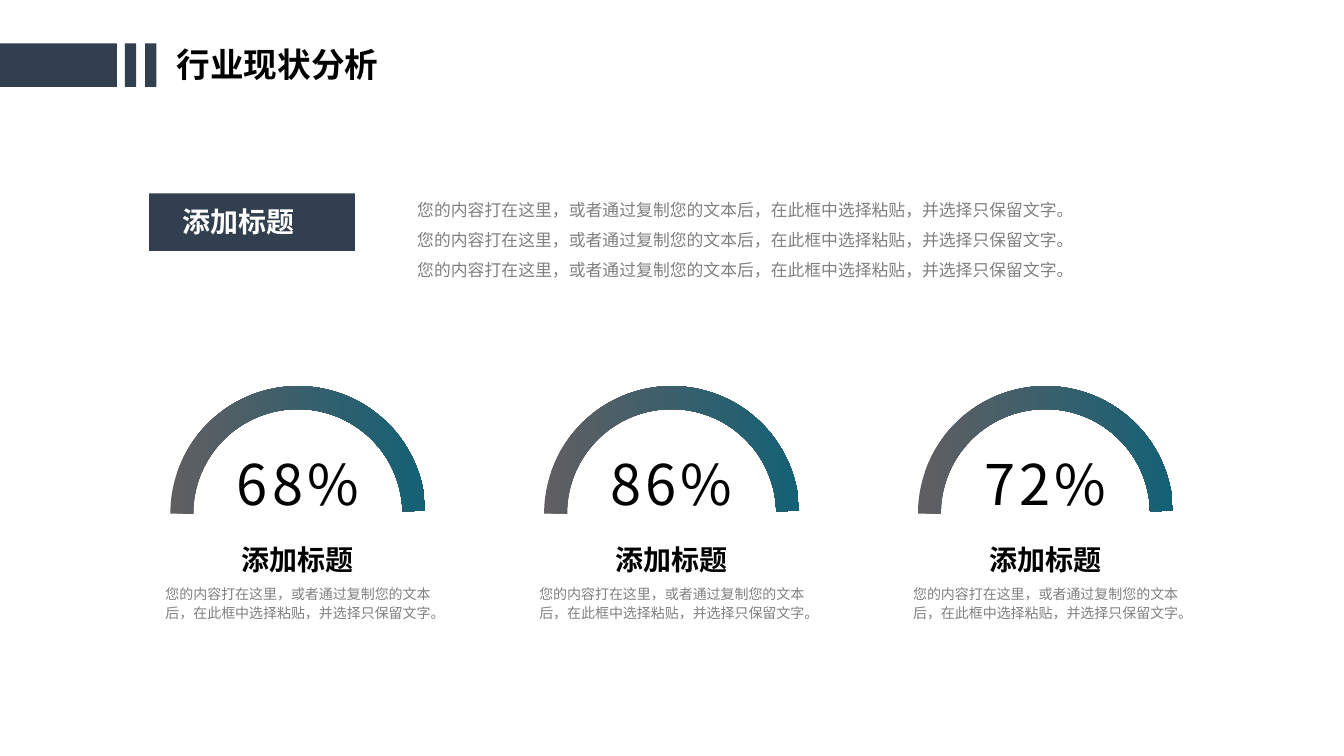
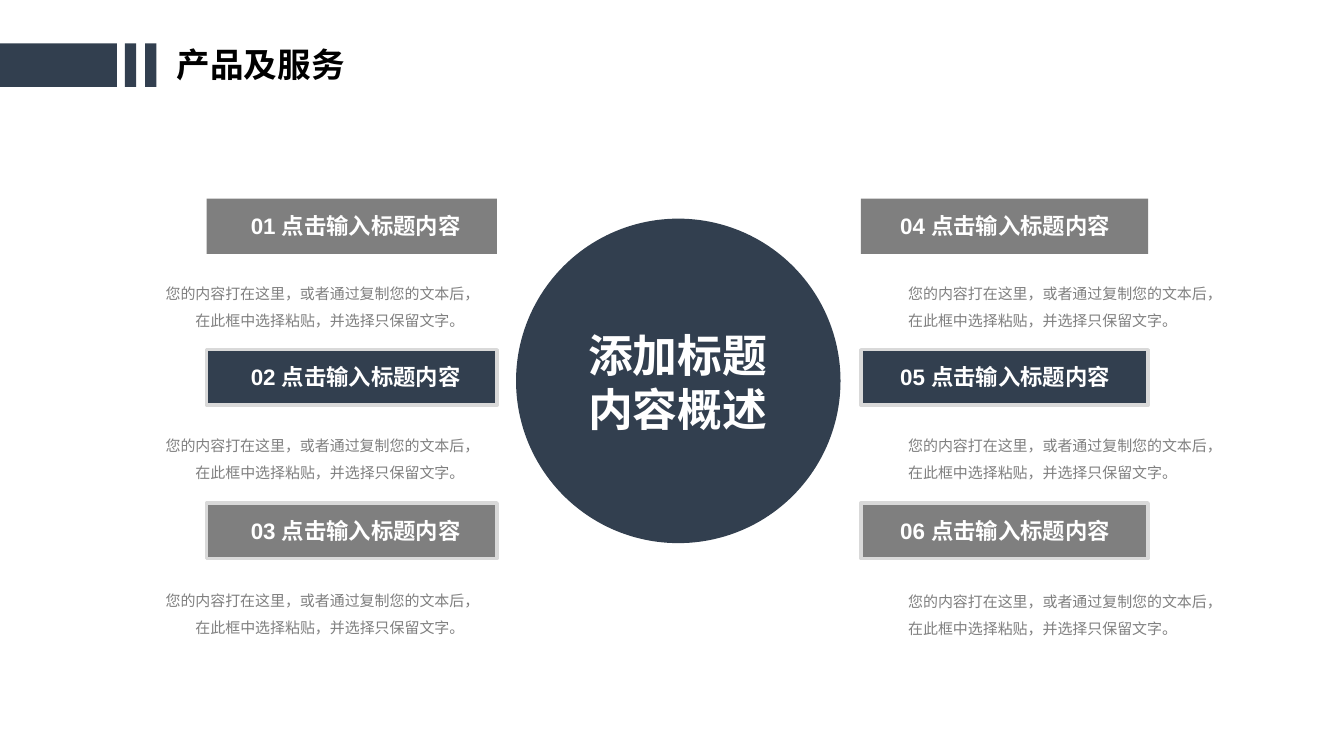
import pptx
import pptx.util
import pptx.dml.color
import pptx.enum.shapes
import pptx.enum.text
import pptx.oxml.ns
import lxml.etree

Pt = pptx.util.Pt
RGB = pptx.dml.color.RGBColor
SHAPE = pptx.enum.shapes.MSO_SHAPE
ALIGN = pptx.enum.text.PP_ALIGN
ANCHOR = pptx.enum.text.MSO_ANCHOR
FIT = pptx.enum.text.MSO_AUTO_SIZE

NAVY = RGB(0x32, 0x3F, 0x4F)
GRAY = RGB(0x7F, 0x7F, 0x7F)
TEXT_GRAY = RGB(0x80, 0x80, 0x80)
BORDER = RGB(0xD9, 0xD9, 0xD9)
ARC_START = RGB(0x61, 0x5E, 0x61)
ARC_END = RGB(0x14, 0x61, 0x76)
WHITE = RGB(0xFF, 0xFF, 0xFF)
BLACK = RGB(0, 0, 0)
LATIN = "Arial"
CJK = "Noto Sans CJK SC"

SUBTITLE = "添加标题"
BODY = "您的内容打在这里，或者通过复制您的文本后，在此框中选择粘贴，并选择只保留文字。"
STATUS_TITLE = "行业现状分析"
PERCENTAGES = ["68%", "86%", "72%"]
SERVICES_TITLE = "产品及服务"
SERVICE_HEADING = "点击输入标题内容"
OVERVIEW = ["添加标题", "内容概述"]

BANDS = [(0, 83.5), (89.3, 8), (103.7, 8)]
GAUGE_CENTER, GAUGE_STEP, GAUGE_SIZE = 212.8, 267, 182.2
SERVICE_ROWS = [(141.8, 208.8, GRAY), (249.8, 317.5, NAVY), (359.3, 428.4, GRAY)]
SERVICE_SIDES = [
    dict(box=(147.6, 207.4), heading=104.4, body=(111.6, 220.3),
         drop=0, body_height=14.4, align=ALIGN.RIGHT),
    dict(box=(614.9, 205.2), heading=643, body=(648.7, 231.8),
         drop=1.4, body_height=12.2, align=ALIGN.LEFT),
]


def write(frame, lines, size, color, bold=False, font=LATIN, align=ALIGN.LEFT,
          spacing=None, before=None, tracking=None, side_inset=7.2,
          anchor=ANCHOR.TOP, grow=True):
    frame.word_wrap = True
    frame.auto_size = FIT.SHAPE_TO_FIT_TEXT if grow else FIT.NONE
    frame.vertical_anchor = anchor
    frame.margin_left = frame.margin_right = Pt(side_inset)
    frame.margin_top = frame.margin_bottom = Pt(3.6)
    for index, line in enumerate(lines):
        paragraph = frame.add_paragraph() if index else frame.paragraphs[0]
        paragraph.alignment = align
        paragraph.line_spacing = spacing
        paragraph.space_before = before
        run = paragraph.add_run()
        run.text = line
        run.font.size = Pt(size)
        run.font.bold = bold
        run.font.name = font
        run.font.color.rgb = color
        properties = run.font._element
        lxml.etree.SubElement(properties, pptx.oxml.ns.qn("a:ea"), typeface=CJK)
        if tracking:
            properties.set("spc", str(tracking * 100))


def add_text(slide, left, top, width, height, lines, size, color, **style):
    box = slide.shapes.add_textbox(Pt(left), Pt(top), Pt(width), Pt(height))
    write(box.text_frame, lines, size, color, **style)


def add_block(slide, kind, left, top, width, height, color=None, border=None):
    block = slide.shapes.add_shape(kind, Pt(left), Pt(top), Pt(width), Pt(height))
    block.shadow.inherit = False
    if color is not None:
        block.fill.solid()
        block.fill.fore_color.rgb = color
    if border is None:
        block.line.fill.background()
    else:
        block.line.color.rgb = border
        block.line.width = Pt(2.5)
    return block


def add_titled_slide(deck, heading):
    slide = deck.slides.add_slide(deck.slide_layouts[5])
    title = slide.shapes.title
    title.left, title.top, title.width, title.height = Pt(119), Pt(28), Pt(253.4), Pt(36)
    write(title.text_frame, [heading], 24, BLACK, bold=True)
    for left, width in BANDS:
        add_block(slide, SHAPE.RECTANGLE, left, 31, width, 31, NAVY)
    return slide


def add_gauge(slide, center, percentage):
    arc = add_block(slide, SHAPE.BLOCK_ARC, center - GAUGE_SIZE / 2, 275.8,
                    GAUGE_SIZE, GAUGE_SIZE)
    for index, value in enumerate([108, 215.22, 0.09]):
        arc.adjustments[index] = value
    arc.fill.gradient()
    arc.fill.gradient_angle = 0
    for stop, color in zip(arc.fill.gradient_stops, [ARC_START, ARC_END]):
        stop.color.rgb = color
    add_text(slide, center - 57.2, 317.5, 114.4, 55.4, [percentage], 40, BLACK,
             font=CJK, align=ALIGN.CENTER, tracking=3)
    add_text(slide, center - 57.2, 383.8, 114.4, 31.7, [SUBTITLE], 20, BLACK,
             bold=True, font=CJK, align=ALIGN.CENTER)
    add_text(slide, center - 103.7, 414, 207.4, 33.8, [BODY], 10, TEXT_GRAY,
             align=ALIGN.CENTER, spacing=Pt(13))


def build_status(deck):
    slide = add_titled_slide(deck, STATUS_TITLE)
    add_text(slide, 290.9, 131.8, 471.6, 94.3, [BODY * 3], 12, TEXT_GRAY,
             align=ALIGN.JUSTIFY, spacing=1.5)
    add_block(slide, SHAPE.RECTANGLE, 106.6, 138.2, 146.9, 41, NAVY)
    add_text(slide, 123.1, 142.6, 114.5, 31.7, [SUBTITLE], 20, WHITE,
             bold=True, font=CJK, align=ALIGN.JUSTIFY)
    for index, percentage in enumerate(PERCENTAGES):
        add_gauge(slide, GAUGE_CENTER + index * GAUGE_STEP, percentage)


def build_services(deck):
    slide = add_titled_slide(deck, SERVICES_TITLE)
    number = 0
    for side in SERVICE_SIDES:
        box_left, box_width = side["box"]
        body_left, body_width = side["body"]
        shared = dict(align=side["align"], side_inset=0, grow=False)
        for row, (top, body_top, color) in enumerate(SERVICE_ROWS):
            number += 1
            add_block(slide, SHAPE.RECTANGLE, box_left, top, box_width, 39.6,
                      color, BORDER if row else None)
            add_text(slide, side["heading"], top + 6.3, 224.6, 33.1,
                     [f"{number:02d} {SERVICE_HEADING}"], 16, WHITE, bold=True,
                     before=Pt(3.2), **shared)
            add_text(slide, body_left, body_top + side["drop"], body_width,
                     side["body_height"], [BODY], 10.7, TEXT_GRAY, spacing=1.5,
                     before=Pt(2.1), anchor=ANCHOR.MIDDLE, **shared)
    add_block(slide, SHAPE.OVAL, 368.6, 156.2, 231.8, 231.8, NAVY)
    add_text(slide, 397.4, 230.4, 173.5, 85, OVERVIEW, 32, WHITE, bold=True,
             align=ALIGN.CENTER)


def main():
    deck = pptx.Presentation()
    deck.slide_width, deck.slide_height = Pt(960), Pt(540)
    build_status(deck)
    build_services(deck)
    deck.save("out.pptx")


if __name__ == "__main__":
    main()
